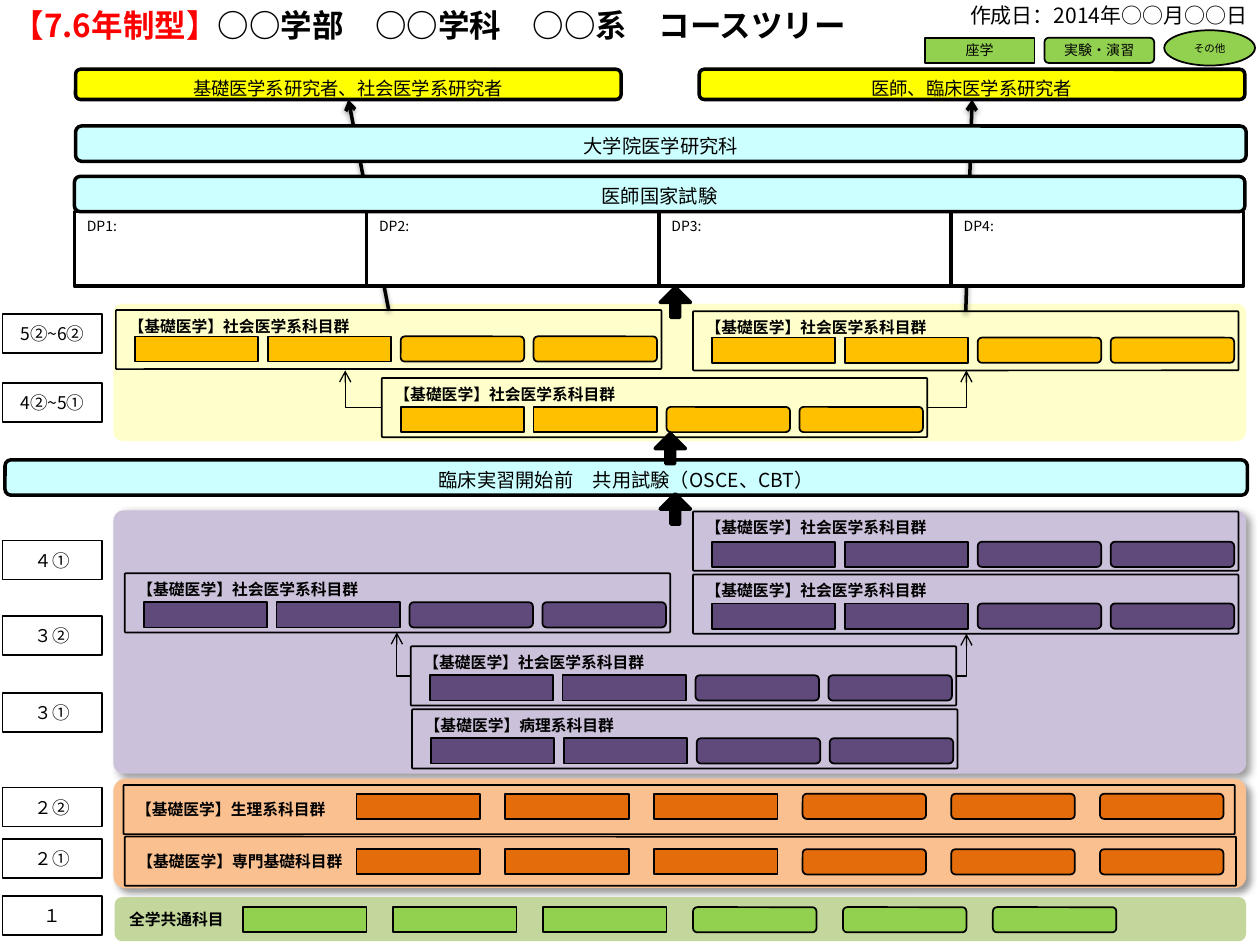
import pptx
import pptx.util
import pptx.dml.color
import pptx.enum.shapes
import pptx.enum.text
import pptx.oxml
import pptx.oxml.ns

SHAPE = pptx.enum.shapes.MSO_SHAPE
CONNECTOR = pptx.enum.shapes.MSO_CONNECTOR
ALIGN = pptx.enum.text.PP_ALIGN
ANCHOR = pptx.enum.text.MSO_ANCHOR
FONT = "Noto Sans CJK JP"
BLACK, WHITE, CYAN, YELLOW = "000000", "FFFFFF", "CCFFFF", "FFFF00"
GREEN, ORANGE, PURPLE, AMBER = "92D050", "E46C0A", "604A7B", "FFC000"

# Content; lengths in inches
TITLE = [("【7.6年制型】", "FF0000"), ("○○学部　○○学科　○○系　コースツリー", BLACK)]
DATE = "作成日：2014年○○月○○日"
LEGEND = [
    ("座学", SHAPE.RECTANGLE, (7.34, 0.3, 0.87, 0.2), 8),
    ("実験・演習", SHAPE.ROUNDED_RECTANGLE, (8.29, 0.3, 0.87, 0.2), 8),
    ("その他", SHAPE.OVAL, (9.24, 0.24, 0.72, 0.28), 6),
]
CAREERS = [("基礎医学系研究者、社会医学系研究者", 0.6), ("医師、臨床医学系研究者", 5.55)]
COMMON_EXAM = ("臨床実習開始前　共用試験（OSCE、CBT）", (0.04, 3.65, 9.86, 0.28))
GRADUATE_STEPS = [("大学院医学研究科", (0.6, 1, 9.29, 0.28)),
                  ("医師国家試験", (0.59, 1.4, 9.29, 0.28))]
POLICIES = ["DP1:", "DP2:", "DP3:", "DP4:"]
TERMS = [("5②~6②", 2.49), ("4②~5①", 3.04), ("４①", 4.29), ("３②", 4.89),
         ("３①", 5.5), ("２②", 6.25), ("２①", 6.66), ("１", 7.11)]
# top, height, fill, corner, shadow
BANDS = [(2.41, 1.09, "FFFFCC", 0.066, False), (4.05, 2.09, "CCC1DA", 0.04, True),
         (6.18, 0.87, "FAC090", 0.11, True)]
SOCIAL = "【基礎医学】社会医学系科目群"
# key: name, left, top, subject colour, subject drop
GROUPS = {
    "pathology": ("【基礎医学】病理系科目群", 3.27, 5.63, PURPLE, 0.23),
    "third_year": (SOCIAL, 3.26, 5.13, PURPLE, 0.23),
    "fourth_left": (SOCIAL, 0.99, 4.55, PURPLE, 0.23),
    "fourth_upper": (SOCIAL, 5.5, 4.06, PURPLE, 0.24),
    "fourth_lower": (SOCIAL, 5.5, 4.56, PURPLE, 0.23),
    "fifth_year": (SOCIAL, 3.03, 3, AMBER, 0.23),
    "sixth_left": (SOCIAL, 0.92, 2.46, AMBER, 0.21),
    "sixth_right": (SOCIAL, 5.5, 2.47, AMBER, 0.21),
}
WIDE_GROUPS = [("【基礎医学】専門基礎科目群", 0.99, 6.64, 0.1),
               ("【基礎医学】生理系科目群", 0.98, 6.23, 0.07)]
BLOCK_ARROWS = [(5.24, 3.92), (5.2, 3.44), (5.24, 2.28)]
# from group, side, tip
BENT_ARROWS = [("fifth_year", 1, (2.74, 2.94)), ("fifth_year", 3, (7.67, 2.94)),
               ("third_year", 1, (3.15, 5.02)), ("third_year", 3, (7.67, 5.03))]

deck = pptx.Presentation()
deck.slide_width, deck.slide_height = pptx.util.Inches(10), pptx.util.Inches(7.5)
slide = deck.slides.add_slide(deck.slide_layouts[5])
shapes = slide.shapes


def inches(lengths):
    return [pptx.util.Inches(length) for length in lengths]


def rgb(color):
    return pptx.dml.color.RGBColor.from_string(color)


def xml_child(parent, tag, **attributes):
    child = pptx.oxml.parse_xml(f'<a:{tag} {pptx.oxml.ns.nsdecls("a")}/>')
    for name, value in attributes.items():
        child.set(name, str(value))
    parent.append(child)
    return child


def cast_shadow(effects, opacity, blur, distance, angle):
    outer = xml_child(effects, "outerShdw", blurRad=int(blur * 12700),
                      dist=int(distance * 12700), dir=angle * 60000, rotWithShape=0)
    xml_child(xml_child(outer, "srgbClr", val=BLACK), "alpha", val=opacity * 1000)


def write(frame, runs, size, align=ALIGN.CENTER, anchor=ANCHOR.MIDDLE, bold=False):
    frame.vertical_anchor = anchor
    paragraph = frame.paragraphs[0]
    paragraph.alignment = align
    for words, color in runs:
        run = paragraph.add_run()
        run.text = words
        run.font.size, run.font.bold, run.font.name = pptx.util.Pt(size), bold, FONT
        run.font.color.rgb = rgb(color)
        xml_child(run.font._element, "ea", typeface=FONT)


def box(kind, place, fill=None, line=1, corner=None, words=None, **style):
    shape = shapes.add_shape(kind, *inches(place))
    shape.shadow.inherit = False
    if fill:
        shape.fill.solid()
        shape.fill.fore_color.rgb = rgb(fill)
    else:
        shape.fill.background()
    if line:
        shape.line.color.rgb = rgb(BLACK)
        shape.line.width = pptx.util.Pt(line)
    else:
        shape.line.fill.background()
    if corner is not None:
        shape.adjustments[0] = corner
    if words:
        write(shape.text_frame, [(words, BLACK)], **style)
    return shape


def bar(words, place, fill, size):
    return box(SHAPE.ROUNDED_RECTANGLE, place, fill, 2, words=words, size=size, anchor=ANCHOR.TOP)


def subjects(left, top, count, pitch, fill):
    """Lectures in the first half of the row, practicals in the second."""
    for i in range(count):
        kind = SHAPE.RECTANGLE if i < count / 2 else SHAPE.ROUNDED_RECTANGLE
        box(kind, (left + i * pitch, top, 0.98, 0.2), fill)


def group(words, place, anchor):
    return box(SHAPE.ROUNDED_RECTANGLE, place, corner=0.021, words=words, size=9,
               align=ALIGN.LEFT, anchor=anchor, bold=True)


def arrow(kind, start, side, tip, width):
    link = shapes.add_connector(kind, 0, 0, *inches(tip))
    link.begin_connect(start, side)
    link.line.color.rgb = rgb(BLACK)
    link.line.width = pptx.util.Pt(width)
    xml_child(link.line._get_or_add_ln(), "tailEnd", type="arrow")
    return link, xml_child(link._element.spPr, "effectLst")


# Title, date and legend
title = shapes.title
title.left, title.top, title.width, title.height = inches((0, 0, 7.2, 0.4))
title.text_frame.auto_size = pptx.enum.text.MSO_AUTO_SIZE.NONE
write(title.text_frame, TITLE, 18, ALIGN.LEFT, bold=True)
date = shapes.add_textbox(*inches((7.3, 0, 2.7, 0.28)))
date.text_frame.word_wrap = True
date.text_frame.margin_top = date.text_frame.margin_bottom = pptx.util.Inches(0.02)
write(date.text_frame, [(DATE, BLACK)], 12, ALIGN.RIGHT, ANCHOR.TOP)
for words, kind, place, size in LEGEND:
    box(kind, place, GREEN, words=words, size=size)

# Careers, shared exam and term labels
careers = [bar(words, (left, 0.55, 4.33, 0.24), YELLOW, 10.5) for words, left in CAREERS]
bar(*COMMON_EXAM, CYAN, 11)
for words, top in TERMS:
    box(SHAPE.RECTANGLE, (0.02, top, 0.79, 0.31), WHITE, words=words, size=10)

# Coloured bands
for top, height, fill, corner, shaded in BANDS:
    band = box(SHAPE.ROUNDED_RECTANGLE, (0.9, top, 8.99, height), fill, 0, corner)
    if shaded:
        cast_shadow(band._element.spPr.find(pptx.oxml.ns.qn("a:effectLst")), 40, 4, 3, 45)
box(SHAPE.ROUNDED_RECTANGLE, (0.91, 7.12, 8.98, 0.35), "C3D69B", 0,
    words="全学共通科目", size=9, align=ALIGN.LEFT, bold=True)
subjects(1.93, 7.2, 6, 1.19, GREEN)

# Subject groups
for words, left, top, drop in WIDE_GROUPS:
    group(words, (left, top, 8.82, 0.39), ANCHOR.MIDDLE)
    subjects(2.83, top + drop, 6, 1.18, ORANGE)
frames = {}
for key, (words, left, top, fill, drop) in GROUPS.items():
    frames[key] = group(words, (left, top, 4.33, 0.47), ANCHOR.TOP)
    subjects(left + 0.15, top + drop, 4, 1.055, fill)

# Arrows between stages
for left, top in BLOCK_ARROWS:
    box(SHAPE.UP_ARROW, (left, top, 0.24, 0.24), BLACK, 2, corner=0.288)
for key, side, tip in BENT_ARROWS:
    link, _ = arrow(CONNECTOR.ELBOW, frames[key], side, tip, 0.75)
    link._element.spPr.find(pptx.oxml.ns.qn("a:prstGeom")).set("prst", "bentConnector2")
for key, career in zip(("sixth_left", "sixth_right"), careers):
    link, effects = arrow(CONNECTOR.STRAIGHT, frames[key], 0, (0, 0), 2)
    link.end_connect(career, 2)
    cast_shadow(effects, 38, 3.1, 1.6, 90)

# Diploma policies and the steps above them
for column, words in enumerate(POLICIES):
    box(SHAPE.RECTANGLE, (0.59 + column * 2.32, 1.68, 2.32, 0.59), WHITE, 2,
        words=words, size=8, align=ALIGN.LEFT, anchor=ANCHOR.TOP)
for words, place in GRADUATE_STEPS:
    bar(words, place, CYAN, 11)

deck.save("out.pptx")
